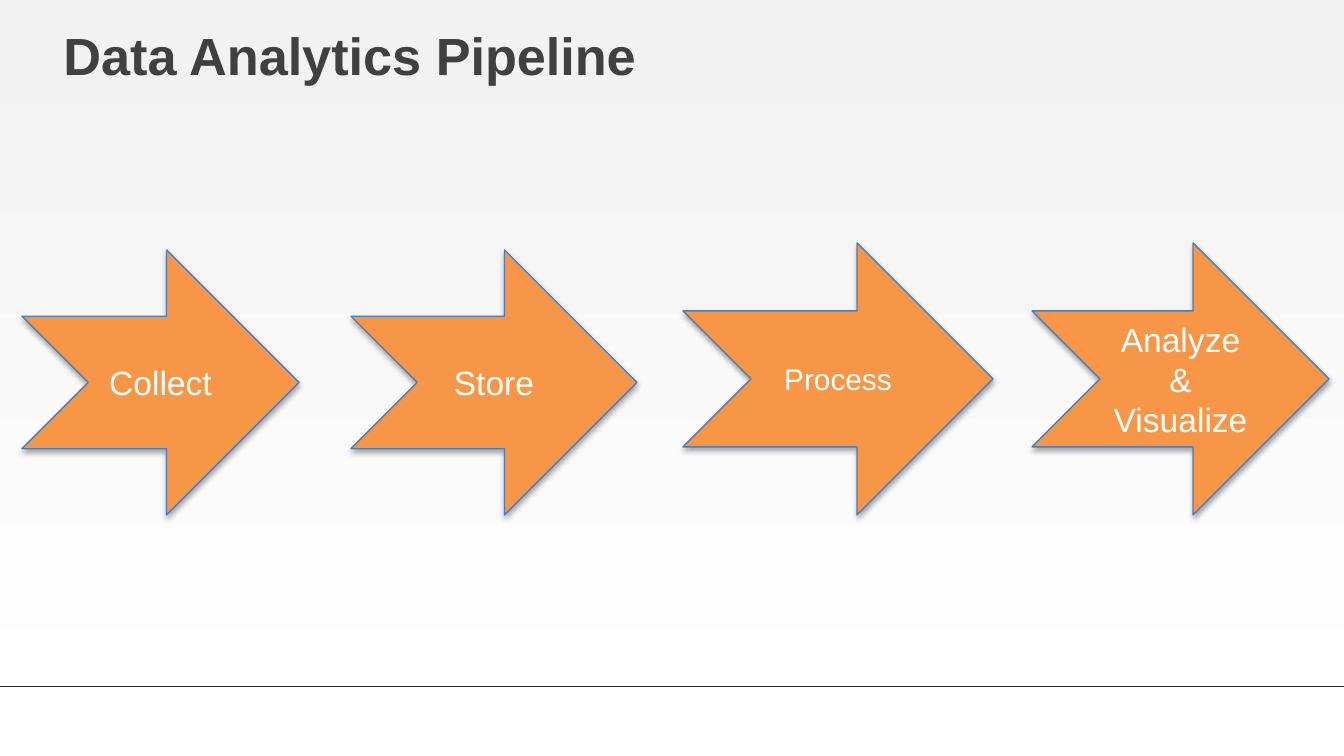
from lxml import etree
from pptx import Presentation
from pptx.dml.color import RGBColor
from pptx.enum.shapes import MSO_CONNECTOR, MSO_SHAPE
from pptx.enum.text import MSO_ANCHOR, MSO_AUTO_SIZE, PP_ALIGN
from pptx.oxml.ns import qn
from pptx.util import Emu, Pt

ARROW = MSO_SHAPE.NOTCHED_RIGHT_ARROW
STRAIGHT = MSO_CONNECTOR.STRAIGHT
TOP, MIDDLE = MSO_ANCHOR.TOP, MSO_ANCHOR.MIDDLE
LEFT, CENTER = PP_ALIGN.LEFT, PP_ALIGN.CENTER
NO_AUTOFIT = MSO_AUTO_SIZE.NONE
TITLE_ONLY = 5
EMU_PER_PX = 914400 / 134.4


def px(length):
    """Turn whole pixels into EMU."""
    return Emu(round(length * EMU_PER_PX))


def color(value):
    """Turn a hex string into a colour."""
    return RGBColor.from_string(value)


def write(frame, text, size, ink, bold=False, align=LEFT, anchor=TOP, font="Arial"):
    """Fill a text frame with one paragraph per line of text."""
    frame.text = text
    frame.word_wrap = True
    frame.auto_size = NO_AUTOFIT
    frame.vertical_anchor = anchor
    for paragraph in frame.paragraphs:
        paragraph.alignment = align
        for run in paragraph.runs:
            run.font.name = font
            run.font.size = Pt(size)
            run.font.bold = bold
            run.font.color.rgb = color(ink)


class PipelineSlide:
    """Hold the pipeline style and the slide being drawn."""

    title_ink = "404040"
    stage_ink = "FFFFFF"
    stage_fill = "F79646"
    stage_line = "4B7EBC"
    rule_line = "272727"

    def __init__(self, deck):
        self.slide = deck.slides.add_slide(deck.slide_layouts[TITLE_ONLY])

    def background(self, bottom, top):
        """Shade the slide from bottom to top."""
        fill = self.slide.background.fill
        fill.gradient()
        fill.gradient_angle = 90
        for stop, shade, position in zip(fill.gradient_stops, (bottom, top), (0.03, 1)):
            stop.color.rgb = color(shade)
            stop.position = position

    def rule(self, left, right, y):
        """Draw a thin horizontal line."""
        line = self.slide.shapes.add_connector(STRAIGHT, px(left), px(y), px(right), px(y))
        line.line.color.rgb = color(self.rule_line)
        line.line.width = Pt(0.25)
        etree.SubElement(line._element.spPr, qn("a:effectLst"))

    def title(self, text, left, top, width, height):
        """Place and format the title."""
        title = self.slide.shapes.title
        title.left, title.top = px(left), px(top)
        title.width, title.height = px(width), px(height)
        write(title.text_frame, text, 28, self.title_ink, bold=True)

    def stage(self, text, left, top, width, height, size):
        """Draw one pipeline stage as a notched arrow."""
        arrow = self.slide.shapes.add_shape(ARROW, px(left), px(top), px(width), px(height))
        arrow.fill.solid()
        arrow.fill.fore_color.rgb = color(self.stage_fill)
        arrow.line.color.rgb = color(self.stage_line)
        arrow.line.width = Pt(0.75)
        self.drop_shadow(arrow)
        write(arrow.text_frame, text, size, self.stage_ink, align=CENTER, anchor=MIDDLE)

    def drop_shadow(self, shape):
        """Give a shape a soft shadow below it."""
        shape.shadow.inherit = False
        effects = shape._element.spPr.find(qn("a:effectLst"))
        shadow = etree.SubElement(
            effects, qn("a:outerShdw"), blurRad=str(Pt(3.1)), dist=str(Pt(1.8)),
            dir="5400000", rotWithShape="0")
        black = etree.SubElement(shadow, qn("a:srgbClr"), val="000000")
        etree.SubElement(black, qn("a:alpha"), val="35000")


def main():
    """Build the data analytics pipeline slide."""
    deck = Presentation()
    deck.slide_width, deck.slide_height = px(1344), px(756)
    pipeline = PipelineSlide(deck)
    pipeline.background("FFFFFF", "F2F2F2")
    pipeline.rule(-12, 1353, 686)
    pipeline.title("Data Analytics Pipeline", 50, 17, 1206, 126)

    stages = [
        ("Collect", 22, 277, 265, 18),
        ("Store", 351, 286, 265, 18),
        ("Process", 683, 310, 272, 16),
        ("Analyze &\nVisualize", 1032, 297, 272, 18),
    ]
    bottom = 515
    for name, left, width, height, size in stages:
        pipeline.stage(name, left, bottom - height, width, height, size)
    deck.save("out.pptx")


if __name__ == "__main__":
    main()
